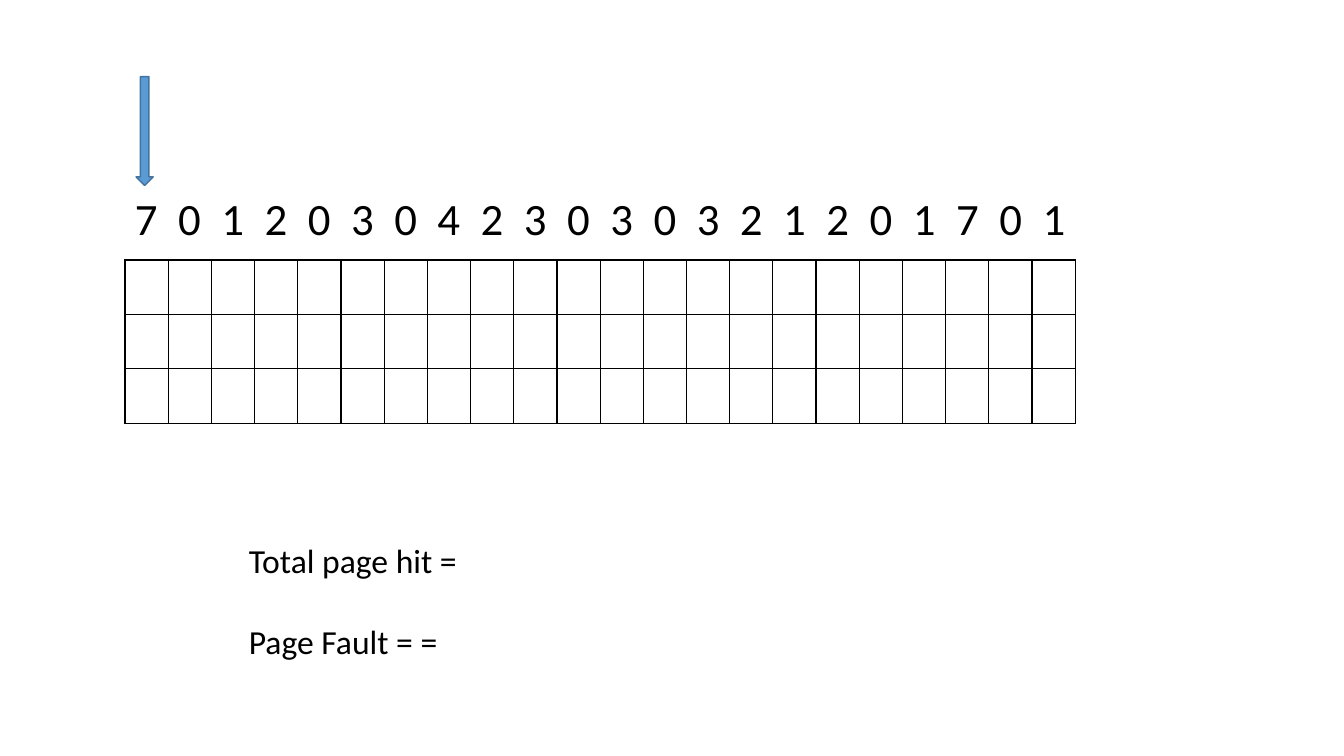
from pptx import Presentation, util as u
from pptx.dml.color import RGBColor
from pptx.enum import shapes, text
from pptx.oxml.ns import qn
from lxml import etree

# Content
REFERENCES = [7, 0, 1, 2, 0, 3, 0, 4, 2, 3, 0, 3, 0, 3, 2, 1, 2, 0, 1, 7, 0, 1]
RESULTS = ["Total page hit =", "Page Fault = ="]
FRAME_COUNT = 3

THEME = {
    "font": "Calibri",
    "ink": "000000",
    "arrow_fill": "5B9BD5",
    "arrow_line": "43739E",
    "reference_size": 32,
    "result_size": 24,
    "result_gap": 29,
    "line": 1,
}

# Layout, in inches
GRID_LEFT, GRID_TOP, GRID_WIDTH = 1.24, 2.58, 9.43
COLUMN_WIDTH = GRID_WIDTH / len(REFERENCES)
ROW_HEIGHT = 0.54


def color(name):
    return RGBColor.from_string(THEME[name])


def style(paragraph, size):
    for run in paragraph.runs:
        run.font.name = THEME["font"]
        run.font.size = u.Pt(THEME[size])
        run.font.color.rgb = color("ink")


def add_text(slide, left, top, width, height):
    frame = slide.shapes.add_textbox(*map(u.Inches, (left, top, width, height))).text_frame
    frame.word_wrap = True
    frame.auto_size = text.MSO_AUTO_SIZE.SHAPE_TO_FIT_TEXT
    return frame


def border_cell(cell):
    properties = cell._tc.get_or_add_tcPr()
    for position, side in enumerate(("lnL", "lnR", "lnT", "lnB")):
        line = etree.Element(qn(f"a:{side}"), w=str(u.Pt(THEME["line"])))
        fill = etree.SubElement(line, qn("a:solidFill"))
        etree.SubElement(fill, qn("a:srgbClr"), val=THEME["ink"])
        properties.insert(position, line)


def add_tab_stops(paragraph):
    stops = etree.SubElement(paragraph._p.get_or_add_pPr(), qn("a:tabLst"))
    for column in range(1, len(REFERENCES)):
        etree.SubElement(stops, qn("a:tab"), pos=str(u.Inches(column * COLUMN_WIDTH)), algn="l")


def main():
    deck = Presentation()
    deck.slide_width, deck.slide_height = u.Inches(13.33), u.Inches(7.5)
    slide = deck.slides.add_slide(deck.slide_layouts[6])

    # Empty page frames, one column per reference
    frames = slide.shapes.add_table(
        FRAME_COUNT, len(REFERENCES), u.Inches(GRID_LEFT), u.Inches(GRID_TOP),
        u.Inches(GRID_WIDTH), u.Inches(FRAME_COUNT * ROW_HEIGHT)).table
    frames.first_row = frames.horz_banding = False
    for column in frames.columns:
        column.width = u.Inches(COLUMN_WIDTH)
    for row in frames.rows:
        row.height = u.Inches(ROW_HEIGHT)
    for cell in frames.iter_cells():
        cell.fill.background()
        border_cell(cell)

    # Reference string, tabbed to the columns
    references = add_text(slide, GRID_LEFT, 1.84, 10.72, 0.64).paragraphs[0]
    add_tab_stops(references)
    references.text = "\t".join(map(str, REFERENCES))
    style(references, "reference_size")

    # Results
    results = add_text(slide, 2.37, 5.31, 5.44, 1.31)
    results.text = "\n".join(RESULTS)
    for paragraph in results.paragraphs:
        style(paragraph, "result_size")
    for paragraph in results.paragraphs[1:]:
        paragraph.space_before = u.Pt(THEME["result_gap"])

    # Arrow to the current reference
    pointer = slide.shapes.add_shape(
        shapes.MSO_SHAPE.DOWN_ARROW, *map(u.Inches, (1.35, 0.76, 0.17, 1.08)))
    pointer.shadow.inherit = False
    pointer.fill.solid()
    pointer.fill.fore_color.rgb = color("arrow_fill")
    pointer.line.color.rgb = color("arrow_line")
    pointer.line.width = u.Pt(THEME["line"])

    deck.save("out.pptx")


if __name__ == "__main__":
    main()
